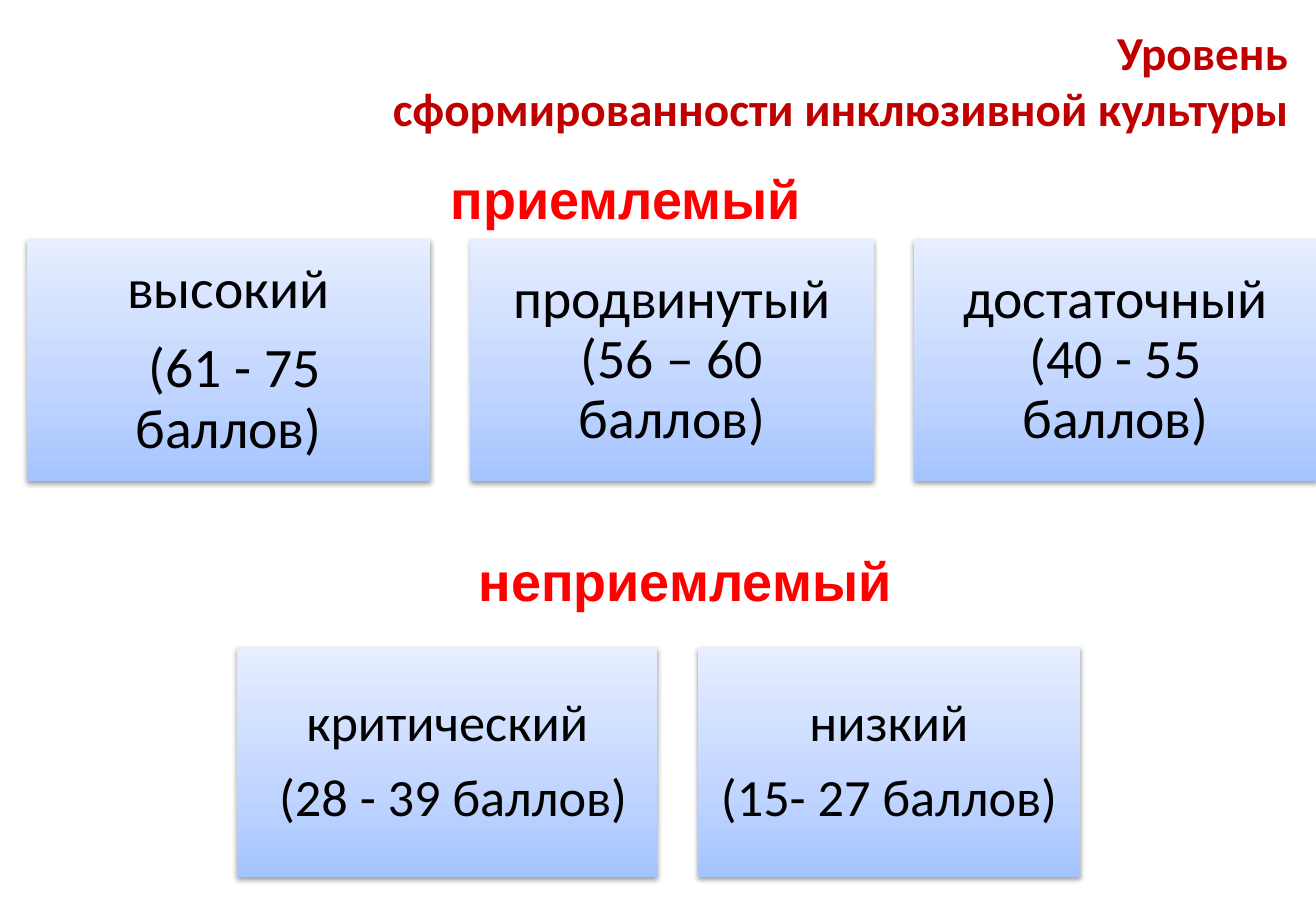
import copy
import pptx
import pptx.util
import pptx.dml.color
import pptx.enum.dml
import pptx.enum.shapes
import pptx.enum.text
import pptx.oxml
import pptx.oxml.ns

Inches, Pt = pptx.util.Inches, pptx.util.Pt
RGBColor = pptx.dml.color.RGBColor
TITLE_RED = RGBColor(0xC0, 0x00, 0x00)
LABEL_RED = RGBColor(0xFF, 0x00, 0x00)
BLACK = RGBColor(0x00, 0x00, 0x00)
CARD_GRADIENT = [
    (0, RGBColor(0xA4, 0xC4, 0xFF)),
    (0.35, RGBColor(0xBF, 0xD4, 0xFF)),
    (1, RGBColor(0xE6, 0xEE, 0xFF)),
]
CARD_SHADOW = (
    f'<a:effectLst {pptx.oxml.ns.nsdecls("a")}>'
    '<a:outerShdw blurRad="39400" dist="20300" dir="5400000" rotWithShape="0">'
    '<a:srgbClr val="000000"><a:alpha val="38000"/></a:srgbClr>'
    '</a:outerShdw></a:effectLst>'
)
CARD_GAP = 0.33


def format_runs(frame, font_name, size, color, bold=False):
    for paragraph in frame.paragraphs:
        for run in paragraph.runs:
            run.font.name = font_name
            run.font.size = Pt(size)
            run.font.bold = bold
            run.font.color.rgb = color


def add_card(left, top, width, height, text, size, inset):
    card = slide.shapes.add_shape(
        pptx.enum.shapes.MSO_SHAPE.RECTANGLE,
        Inches(left), Inches(top), Inches(width), Inches(height))
    card.fill.gradient()
    card.fill.gradient_angle = 90
    stop_list = card.fill._fill._gradFill.gsLst
    stop_list.insert(1, copy.deepcopy(stop_list[0]))
    for stop, (position, color) in zip(card.fill.gradient_stops, CARD_GRADIENT):
        stop.position = position
        stop.color.rgb = color
    card.line.fill.background()
    card._element.spPr.append(pptx.oxml.parse_xml(CARD_SHADOW))

    frame = card.text_frame
    frame.word_wrap = True
    frame.vertical_anchor = pptx.enum.text.MSO_ANCHOR.MIDDLE
    frame.margin_left = frame.margin_right = Inches(inset)
    frame.margin_top = frame.margin_bottom = Inches(inset)
    frame.text = text
    for paragraph in frame.paragraphs:
        paragraph.alignment = pptx.enum.text.PP_ALIGN.CENTER
        paragraph.line_spacing = 0.9
        paragraph.space_after = Pt(size * 0.35)
    format_runs(frame, "Calibri", size, BLACK)


presentation = pptx.Presentation()
presentation.slide_width = Inches(10.83)
presentation.slide_height = Inches(7.5)
slide = presentation.slides.add_slide(presentation.slide_layouts[5])

heading = slide.shapes.title
heading.left, heading.top = Inches(2.35), Inches(0.21)
heading.width, heading.height = Inches(8.35), Inches(0.89)
heading.text_frame.text = "Уровень\vсформированности инклюзивной культуры"
heading.text_frame.auto_size = pptx.enum.text.MSO_AUTO_SIZE.NONE
heading.text_frame.vertical_anchor = pptx.enum.text.MSO_ANCHOR.MIDDLE
heading.text_frame.paragraphs[0].alignment = pptx.enum.text.PP_ALIGN.RIGHT
format_runs(heading.text_frame, "Calibri", 28, TITLE_RED, True)

levels = [
    {"label": ("приемлемый", 3.61, 1.31, 3.11),
     "left": 0.22, "top": 1.97, "height": 1.99, "size": 33, "inset": 0.14,
     "cards": [("высокий\n (61 - 75 баллов)", 3.32),
               ("продвинутый (56 – 60 баллов)", 3.32),
               ("достаточный (40 - 55 баллов)", 3.32)]},
    {"label": ("неприемлемый", 3.84, 4.46, 3.63),
     "left": 1.95, "top": 5.33, "height": 1.89, "size": 31, "inset": 0.13,
     "cards": [("критический\n (28 - 39 баллов)", 3.46),
               ("низкий\n(15- 27 баллов)", 3.15)]},
]

for level in levels:
    left = level["left"]
    for text, width in level["cards"]:
        add_card(left, level["top"], width, level["height"], text,
                 level["size"], level["inset"])
        left += width + CARD_GAP

    text, left, top, width = level["label"]
    label = slide.shapes.add_textbox(
        Inches(left), Inches(top), Inches(width), Inches(0.64))
    label.text_frame.text = text
    label.text_frame.word_wrap = False
    label.text_frame.auto_size = pptx.enum.text.MSO_AUTO_SIZE.SHAPE_TO_FIT_TEXT
    format_runs(label.text_frame, "Arial", 32, LABEL_RED, True)

presentation.save("out.pptx")
